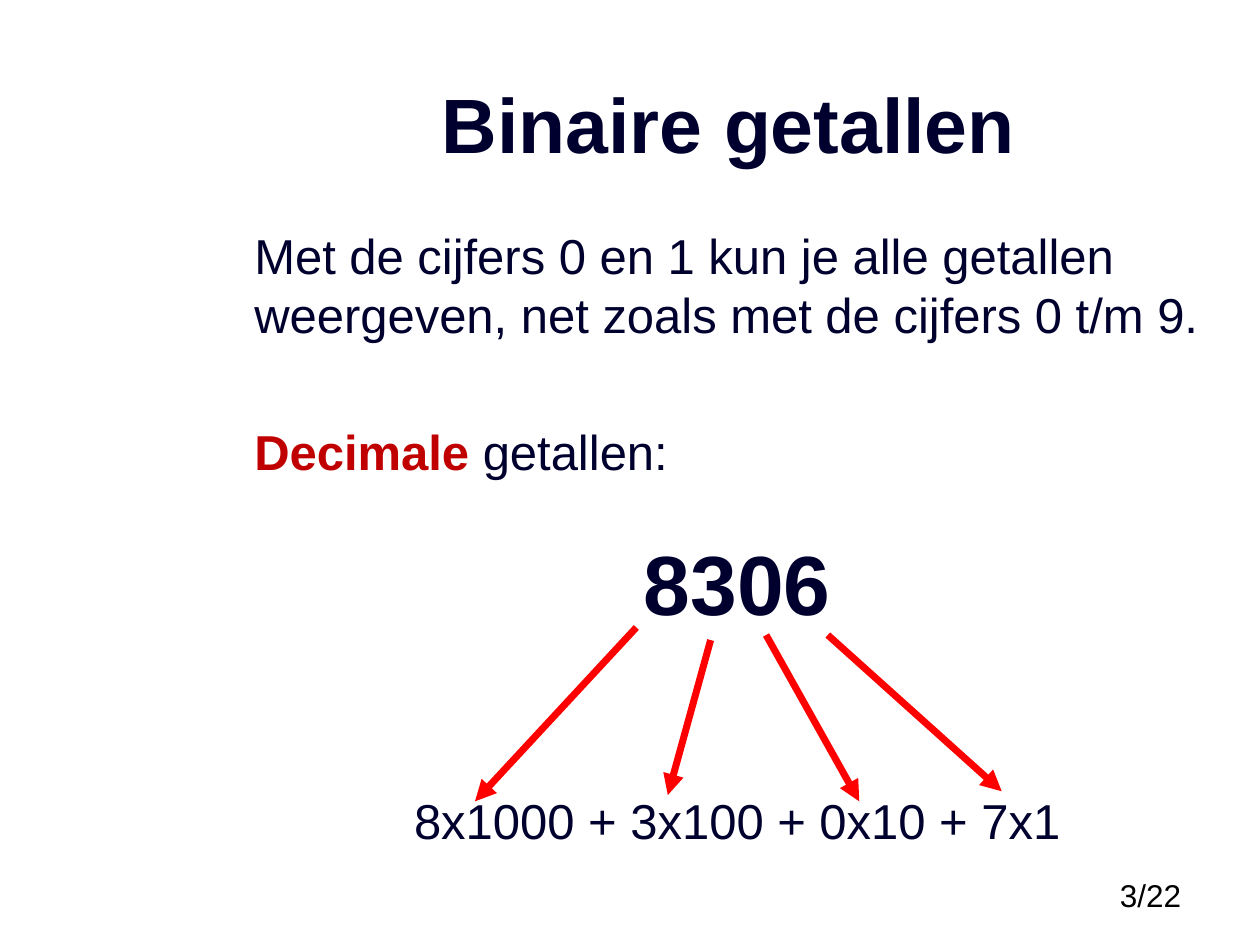
import pptx
import pptx.dml.color
import pptx.enum.shapes
import pptx.enum.text
import pptx.oxml
import pptx.oxml.ns
import pptx.util

NAVY = pptx.dml.color.RGBColor(0x00, 0x00, 0x2E)
DARK_RED = pptx.dml.color.RGBColor(0xC0, 0x00, 0x00)
RED = pptx.dml.color.RGBColor(0xFF, 0x00, 0x00)
BLACK = pptx.dml.color.RGBColor(0x00, 0x00, 0x00)

WIDTH, HEIGHT = 10, 7.5
LEFT = pptx.enum.text.PP_ALIGN.LEFT
CENTER = pptx.enum.text.PP_ALIGN.CENTER

# Start and end of each arrow, from a digit to its term in the sum
DIGIT_ARROWS = [
    ((5.05, 4.98), (3.77, 6.36)),
    ((5.64, 5.08), (5.30, 6.31)),
    ((6.08, 5.04), (6.82, 6.36)),
    ((6.57, 5.04), (7.95, 6.28)),
]


def share(x, y):
    """Turn shares of the slide's size into lengths."""
    return pptx.util.Inches(x * WIDTH), pptx.util.Inches(y * HEIGHT)


def place(shape, x, y, width, height):
    shape.left, shape.top = share(x, y)
    shape.width, shape.height = share(width, height)


def add_run(paragraph, text, size, color=NAVY, bold=False):
    run = paragraph.add_run()
    run.text = text
    font_format = {"name": "Arial", "size": pptx.util.Pt(size), "bold": bold}
    for attribute, value in font_format.items():
        setattr(run.font, attribute, value)
    run.font.color.rgb = color


def add_text_frame(slide, x, y, width, height):
    box = slide.shapes.add_textbox(*share(x, y), *share(width, height))
    box.text_frame.word_wrap = True
    return box.text_frame


def format_paragraph(paragraph, alignment, before, line):
    paragraph_format = {
        "alignment": alignment,
        "space_before": pptx.util.Pt(before),
        "line_spacing": pptx.util.Pt(line),
    }
    for attribute, value in paragraph_format.items():
        setattr(paragraph, attribute, value)


def add_title(slide, text):
    title = slide.shapes.title
    place(title, 0.195, 0.035, 0.767, 0.189)
    title.text_frame.vertical_anchor = pptx.enum.text.MSO_ANCHOR.MIDDLE
    heading = title.text_frame.paragraphs[0]
    heading.alignment = CENTER
    add_run(heading, text, 44, bold=True)


def add_explanation(slide):
    frame = add_text_frame(slide, 0.192, 0.231, 0.786, 0.736)
    intro = frame.paragraphs[0]
    format_paragraph(intro, LEFT, 0, 34)
    add_run(intro, "Met de cijfers 0 en 1 kun je alle getallen "
                   "weergeven, net zoals met de cijfers 0 t/m 9.", 28)

    decimal = frame.add_paragraph()
    format_paragraph(decimal, LEFT, 44, 34)
    add_run(decimal, "Decimale ", 28, DARK_RED, True)
    add_run(decimal, "getallen:", 28)

    number = frame.add_paragraph()
    format_paragraph(number, CENTER, 29, 58)
    add_run(number, "8306", 48, bold=True)

    expansion = frame.add_paragraph()
    format_paragraph(expansion, CENTER, 90, 34)
    add_run(expansion, "8x1000 + 3x100 + 0x10 + 7x1", 28)


def add_arrow(slide, start, end):
    points = [pptx.util.Inches(length) for length in (*start, *end)]
    arrow = slide.shapes.add_connector(
        pptx.enum.shapes.MSO_CONNECTOR.STRAIGHT, *points)
    arrow.line.color.rgb = RED
    arrow.line.width = pptx.util.Pt(4)
    line_xml = arrow.line._get_or_add_ln()
    namespace = pptx.oxml.ns.nsdecls("a")
    line_xml.append(pptx.oxml.parse_xml(f'<a:tailEnd {namespace} type="triangle"/>'))
    line_xml.addnext(pptx.oxml.parse_xml(f"<a:effectLst {namespace}/>"))


def add_page_number(slide, text):
    frame = add_text_frame(slide, 0.879, 0.92, 0.121, 0.053)
    add_run(frame.paragraphs[0], text, 18, BLACK)


def main():
    presentation = pptx.Presentation()
    presentation.slide_width, presentation.slide_height = share(1, 1)
    slide = presentation.slides.add_slide(presentation.slide_layouts[5])
    add_page_number(slide, "3/22")
    add_title(slide, "Binaire getallen")
    add_explanation(slide)
    for start, end in DIGIT_ARROWS:
        add_arrow(slide, start, end)
    presentation.save("out.pptx")


if __name__ == "__main__":
    main()
